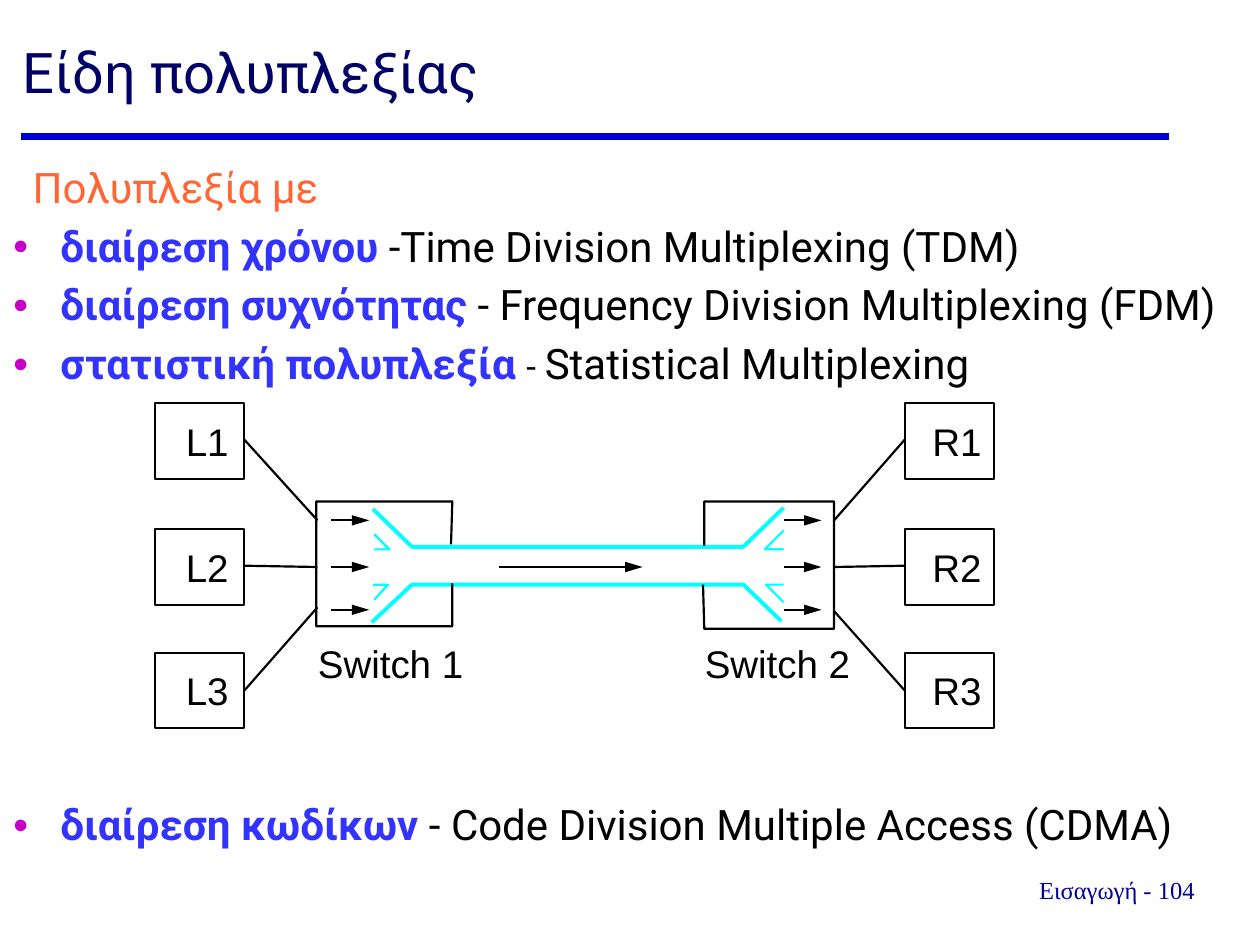
"""Build a slide on the kinds of multiplexing, with a two-switch diagram."""
from lxml.etree import SubElement
from pptx import Presentation
from pptx.dml.color import RGBColor
from pptx.enum.shapes import MSO_CONNECTOR as Connector, MSO_SHAPE as Shape
from pptx.enum.text import MSO_ANCHOR as Anchor, PP_ALIGN as Align
from pptx.oxml.ns import qn
from pptx.util import Pt

PX = 9144
BLACK = RGBColor(0x00, 0x00, 0x00)
NAVY = RGBColor(0x00, 0x00, 0x66)
FOOTER_BLUE = RGBColor(0x00, 0x00, 0x99)
RULE_BLUE = RGBColor(0x00, 0x00, 0xCC)
TERM_BLUE = RGBColor(0x33, 0x33, 0xFF)
ORANGE = RGBColor(0xFF, 0x66, 0x33)
CYAN = RGBColor(0x00, 0xFF, 0xFF)
BULLET_COLOR = "C700C7"

TITLE = "Είδη πολυπλεξίας"
LEAD = "Πολυπλεξία με"
FOOTER = "Εισαγωγή - 104"
ITEMS = [
    ("διαίρεση χρόνου", " -", "Time Division Multiplexing (TDM)", 24, 4.8),
    ("διαίρεση συχνότητας", " - ", "Frequency Division Multiplexing (FDM)", 24, 4.8),
    ("στατιστική πολυπλεξία ", "- ", "Statistical Multiplexing", 20, 4.8),
    ("διαίρεση κωδίκων", " - ", "Code Division Multiple Access (CDMA)", 24, 234.7),
]

HOST_SIZE = (71, 60)
HOST_TOPS = [320, 420, 518]
HOST_COLUMNS = [("L", 123), ("R", 718)]
LINKS = [
    (194, 252, (413, 450, 482)),
    (718, 662, (413, 450, 485)),
]
LINK_HOST_YS = (349, 449, 548)
SWITCHES = [
    ("Switch 1", 240, [(358, 432), (359, 398), (251, 398), (251, 497), (359, 497), (359, 463)]),
    ("Switch 2", 547, [(558, 464), (559, 499), (662, 499), (662, 398), (559, 398), (559, 433)]),
]
CHANNEL = [
    [(296, 404), (327, 434), (590, 434), (622, 403)],
    [(620, 493), (590, 464), (327, 464), (295, 494)],
]
NOTCHES = [
    [(297, 436), (309, 436), (297, 424)],
    [(296, 464), (308, 464), (297, 476)],
    [(622, 436), (607, 436), (622, 421)],
    [(622, 464), (608, 464), (622, 478)],
]
ARROWS = [(396, 510, 450)] + [
    (left, left + 30, y) for left in (263, 622) for y in (413, 450, 484)
]


def set_values(target, values):
    for name, value in values.items():
        setattr(target, name, value)


def add_run(paragraph, text, font, size, color, bold=False):
    run = paragraph.add_run()
    run.text = text
    set_values(run.font, {"name": font, "size": Pt(size), "bold": bold})
    run.font.color.rgb = color


def place(shape, left, top, width, height):
    set_values(shape, {"left": left * PX, "top": top * PX,
                       "width": width * PX, "height": height * PX})


def indent(paragraph, margin, hanging=0, bullet=None):
    properties = paragraph._p.get_or_add_pPr()
    properties.set("marL", str(margin * PX))
    properties.set("indent", str(-hanging * PX))
    if bullet is None:
        SubElement(properties, qn("a:buNone"))
        return
    color = SubElement(properties, qn("a:buClr"))
    SubElement(color, qn("a:srgbClr"), val=BULLET_COLOR)
    SubElement(properties, qn("a:buSzPct"), val="64000")
    SubElement(properties, qn("a:buFont"), typeface="Arial")
    SubElement(properties, qn("a:buChar"), char=bullet)


def add_line(shapes, start, end, color=BLACK, width=1.25, arrow=False):
    ends = [value * PX for value in (*start, *end)]
    connector = shapes.add_connector(Connector.STRAIGHT, *ends)
    connector.line.color.rgb = color
    connector.line.width = Pt(width)
    if arrow:
        SubElement(connector.line._get_or_add_ln(), qn("a:tailEnd"),
                   type="triangle", w="med", len="lg")
    SubElement(connector._element.spPr, qn("a:effectLst"))


def outline(shape, color, width):
    shape.shadow.inherit = False
    shape.fill.background()
    shape.line.color.rgb = color
    shape.line.width = Pt(width)


def add_path(shapes, points, color, width):
    builder = shapes.build_freeform(*points[0], scale=PX)
    builder.add_line_segments(points[1:], close=False)
    outline(builder.convert_to_shape(), color, width)


def write_label(shape, text, font="Arial", size=22, color=BLACK, left_inset=0):
    set_values(shape.text_frame, {
        "margin_left": left_inset * PX, "margin_right": 0, "margin_top": 0,
        "margin_bottom": 0, "word_wrap": False, "vertical_anchor": Anchor.MIDDLE})
    paragraph = shape.text_frame.paragraphs[0]
    paragraph.alignment = Align.CENTER
    add_run(paragraph, text, font, size, color)


def add_label(shapes, text, left, top, width, height, **style):
    box = shapes.add_textbox(*[value * PX for value in (left, top, width, height)])
    write_label(box, text, **style)


def fill_placeholders(slide):
    title, body = slide.placeholders
    place(title, 8, 25, 967, 84)
    place(body, 0, 123, 1122, 544)
    for shape in (title, body):
        set_values(shape.text_frame, {"vertical_anchor": Anchor.TOP, "word_wrap": True})
    heading = title.text_frame.paragraphs[0]
    heading.alignment = Align.LEFT
    add_run(heading, TITLE, "Roboto", 32, NAVY)

    lead = body.text_frame.paragraphs[0]
    lead.space_before = Pt(0)
    indent(lead, 16)
    add_run(lead, LEAD, "Roboto", 24, ORANGE)
    for term, dash, meaning, dash_size, space in ITEMS:
        paragraph = body.text_frame.add_paragraph()
        paragraph.space_before = Pt(space)
        indent(paragraph, 38, 38, "●")
        add_run(paragraph, term, "Roboto", 24, TERM_BLUE, bold=True)
        add_run(paragraph, dash, "Roboto", dash_size, BLACK)
        add_run(paragraph, meaning, "Roboto", 24, BLACK)


def draw_diagram(shapes):
    for points in CHANNEL:
        add_path(shapes, points, CYAN, 2.25)
    for side, left in HOST_COLUMNS:
        for number, top in enumerate(HOST_TOPS, 1):
            bounds = [value * PX for value in (left, top, *HOST_SIZE)]
            host = shapes.add_shape(Shape.RECTANGLE, *bounds)
            outline(host, BLACK, 1.25)
            write_label(host, f"{side}{number}", left_inset=12)
    for name, left, points in SWITCHES:
        add_path(shapes, points, BLACK, 1.25)
        add_label(shapes, name, left, 508, 140, 37)
    for host_x, switch_x, switch_ys in LINKS:
        for host_y, switch_y in zip(LINK_HOST_YS, switch_ys):
            add_line(shapes, (host_x, host_y), (switch_x, switch_y))
    for points in NOTCHES:
        add_path(shapes, points, CYAN, 1.25)
    for start, end, y in ARROWS:
        add_line(shapes, (start, y), (end, y), arrow=True)


def main():
    presentation = Presentation()
    set_values(presentation, {"slide_width": 1000 * PX, "slide_height": 750 * PX})
    slide = presentation.slides.add_slide(presentation.slide_layouts[1])
    fill_placeholders(slide)
    add_line(slide.shapes, (17, 108), (928, 108), RULE_BLUE, 4)
    draw_diagram(slide.shapes)
    add_label(slide.shapes, FOOTER, 799, 690, 175, 33,
              font="Times New Roman", size=14, color=FOOTER_BLUE)
    presentation.save("out.pptx")


if __name__ == "__main__":
    main()
